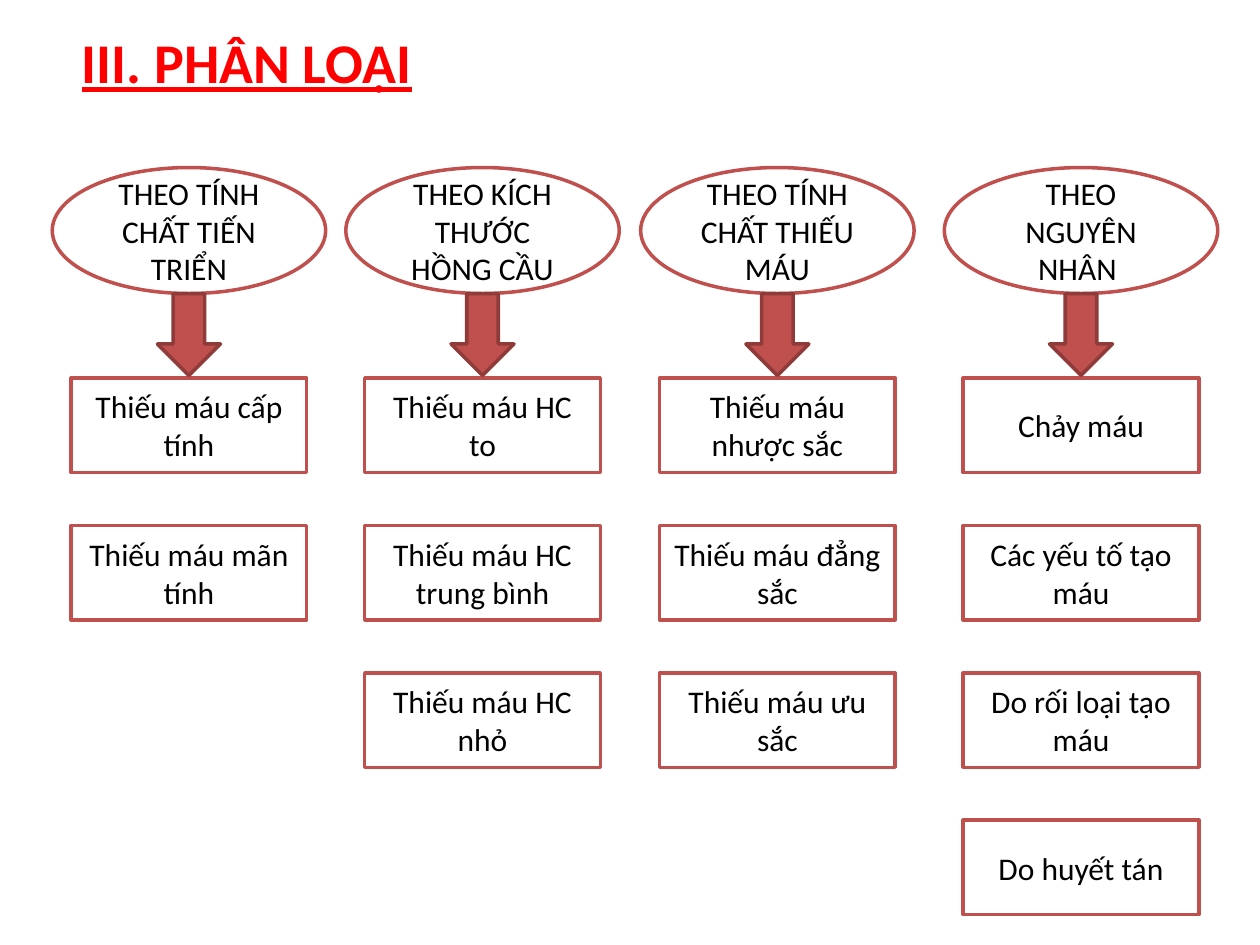
from dataclasses import dataclass

from pptx import Presentation
from pptx.dml.color import RGBColor
from pptx.enum.shapes import MSO_SHAPE
from pptx.enum.text import MSO_ANCHOR, MSO_AUTO_SIZE, PP_ALIGN
from pptx.util import Inches, Pt


@dataclass(frozen=True)
class Theme:
    font: str = "Calibri"
    title_size: int = 32
    body_size: int = 18
    line_width: int = 2
    title: RGBColor = RGBColor(0xFF, 0x00, 0x00)
    text: RGBColor = RGBColor(0x00, 0x00, 0x00)
    paper: RGBColor = RGBColor(0xFF, 0xFF, 0xFF)
    accent: RGBColor = RGBColor(0xC0, 0x50, 0x4D)
    accent_dark: RGBColor = RGBColor(0x8E, 0x3B, 0x39)


THEME = Theme()

COLUMN_CENTERS = (1.5, 3.83, 6.17, 8.58)
CRITERION_TOP = 1.33
CRITERION_SIZE = (2.17, 1)
ARROW_TOP = CRITERION_TOP + CRITERION_SIZE[1]
ARROW_SIZE = (0.5, 0.65)
FIRST_ROW_TOP = 3
ROW_PITCH = 1.17
TYPE_SIZE = (1.87, 0.75)

CLASSIFICATION = (
    ("THEO TÍNH CHẤT TIẾN TRIỂN",
     ("Thiếu máu cấp tính", "Thiếu máu mãn tính")),
    ("THEO KÍCH THƯỚC HỒNG CẦU",
     ("Thiếu máu HC to", "Thiếu máu HC trung bình", "Thiếu máu HC nhỏ")),
    ("THEO TÍNH CHẤT THIẾU MÁU",
     ("Thiếu máu nhược sắc", "Thiếu máu đẳng sắc", "Thiếu máu ưu sắc")),
    ("THEO NGUYÊN NHÂN ",
     ("Chảy máu", "Các yếu tố tạo máu", "Do rối loại tạo máu", "Do huyết tán")),
)


def add_run(paragraph, text, size, color):
    run = paragraph.add_run()
    run.text = text
    run.font.name = THEME.font
    run.font.size = Pt(size)
    run.font.color.rgb = color
    return run


def add_heading(slide, text):
    heading = slide.shapes.title
    heading.left, heading.top = Inches(0.55), Inches(0.17)
    heading.width, heading.height = Inches(3.17), Inches(0.64)
    frame = heading.text_frame
    frame.word_wrap = False
    frame.auto_size = MSO_AUTO_SIZE.SHAPE_TO_FIT_TEXT
    frame.vertical_anchor = MSO_ANCHOR.TOP
    paragraph = frame.paragraphs[0]
    paragraph.alignment = PP_ALIGN.LEFT
    run = add_run(paragraph, text, THEME.title_size, THEME.title)
    run.font.bold = True
    run.font.underline = True


def add_centered(slide, preset, center, top, size, fill, line):
    width, height = size
    figure = slide.shapes.add_shape(
        preset, Inches(center - width / 2), Inches(top), Inches(width), Inches(height))
    figure.shadow.inherit = False
    figure.fill.solid()
    figure.fill.fore_color.rgb = fill
    figure.line.color.rgb = line
    figure.line.width = Pt(THEME.line_width)
    return figure


def add_label(slide, preset, center, top, size, text):
    label = add_centered(slide, preset, center, top, size, THEME.paper, THEME.accent)
    frame = label.text_frame
    frame.word_wrap = True
    frame.vertical_anchor = MSO_ANCHOR.MIDDLE
    paragraph = frame.paragraphs[0]
    paragraph.alignment = PP_ALIGN.CENTER
    add_run(paragraph, text, THEME.body_size, THEME.text)


def add_branch(slide, center, criterion, anemia_types):
    add_label(slide, MSO_SHAPE.OVAL, center, CRITERION_TOP, CRITERION_SIZE, criterion)
    for row, anemia_type in enumerate(anemia_types):
        add_label(slide, MSO_SHAPE.RECTANGLE, center,
                  FIRST_ROW_TOP + row * ROW_PITCH, TYPE_SIZE, anemia_type)
    add_centered(slide, MSO_SHAPE.DOWN_ARROW, center, ARROW_TOP, ARROW_SIZE,
                 THEME.accent, THEME.accent_dark)


def main():
    deck = Presentation()
    deck.slide_width, deck.slide_height = Inches(10), Inches(7.5)
    slide = deck.slides.add_slide(deck.slide_layouts[5])
    add_heading(slide, "III. PHÂN LOẠI")
    for center, (criterion, anemia_types) in zip(COLUMN_CENTERS, CLASSIFICATION):
        add_branch(slide, center, criterion, anemia_types)
    deck.save("out.pptx")


if __name__ == "__main__":
    main()
